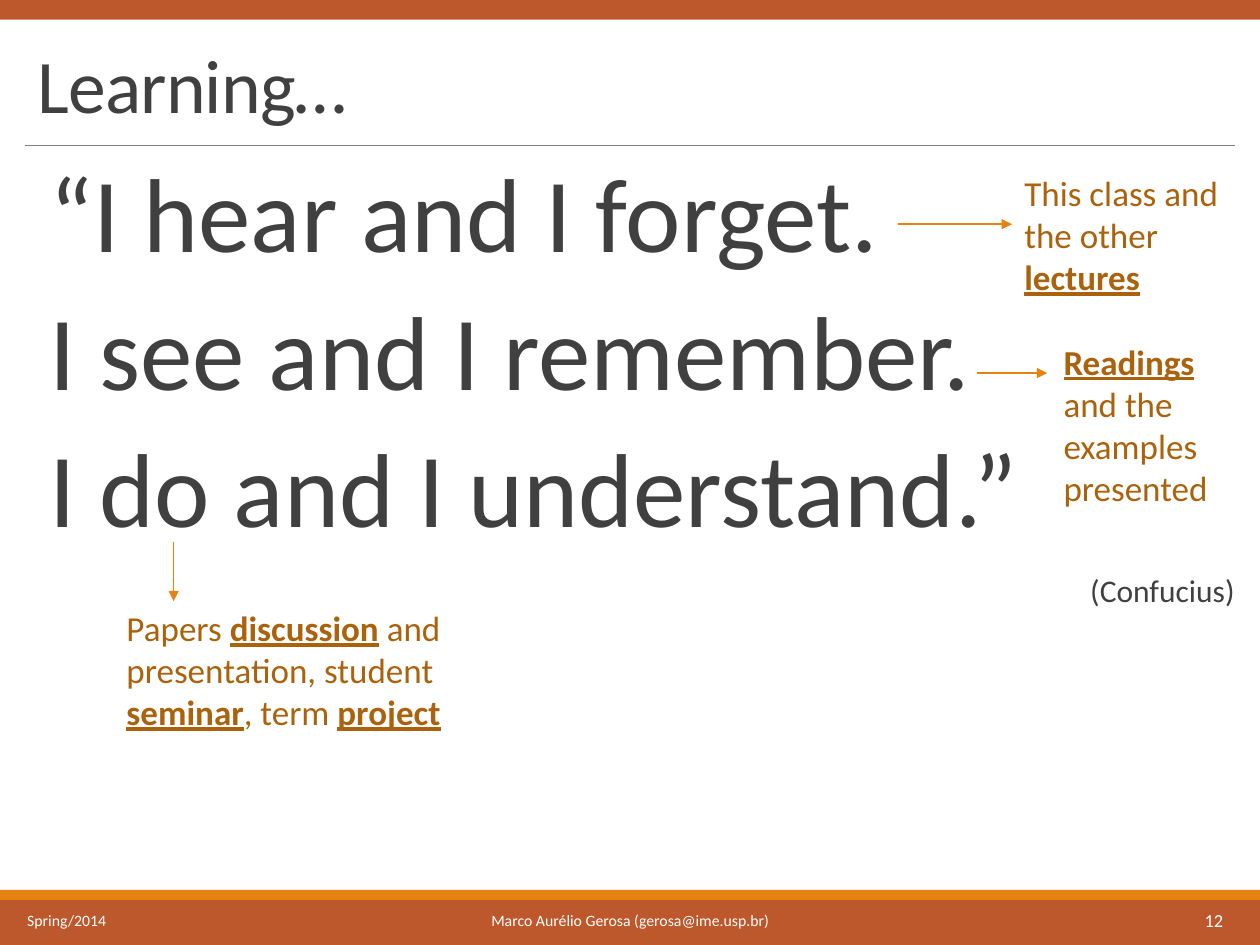
from lxml import etree
from pptx import Presentation
from pptx.dml.color import RGBColor
from pptx.enum.shapes import MSO_CONNECTOR, MSO_SHAPE
from pptx.enum.text import MSO_ANCHOR, MSO_AUTO_SIZE, PP_ALIGN
from pptx.oxml.ns import qn
from pptx.util import Cm, Pt

RECT = MSO_SHAPE.RECTANGLE
LINE = MSO_CONNECTOR.STRAIGHT
TOP, MID, LOW = MSO_ANCHOR.TOP, MSO_ANCHOR.MIDDLE, MSO_ANCHOR.BOTTOM
GROW, FIXED = MSO_AUTO_SIZE.SHAPE_TO_FIT_TEXT, MSO_AUTO_SIZE.NONE
LEFT, MIDDLE, RIGHT = PP_ALIGN.LEFT, PP_ALIGN.CENTER, PP_ALIGN.RIGHT

RUST = RGBColor(0xBD, 0x58, 0x2C)
AMBER = RGBColor(0xE4, 0x83, 0x12)
BROWN = RGBColor(0xAB, 0x62, 0x0D)
DARK = RGBColor(0x40, 0x40, 0x40)
GREY = RGBColor(0x80, 0x80, 0x80)
WHITE = RGBColor(0xFF, 0xFF, 0xFF)

WIDE, HIGH = 25.4, 19.05
EDGE = 0.51
SPAN = WIDE - 2 * EDGE
INDENT = 0.49

BARS = [
    (18.14, 0.91, RUST),
    (17.94, 0.2, AMBER),
    (0, 0.4, RUST),
]
TITLE = "Learning…"
QUOTE = [
    ("“I hear and I forget.", 60, LEFT),
    ("I see and I remember.", 60, LEFT),
    ("I do and I understand.”", 60, LEFT),
    ("(Confucius)", 18, RIGHT),
]
FOOT = [
    ("Spring/2014", (0.3, 18.17, 5.16, 0.76), 9, LEFT),
    ("Marco Aurélio Gerosa (gerosa@ime.usp.br)", (7.67, 18.14, 10.06, 0.84), 9, MIDDLE),
    ("12", (22.17, 18.17, 2.74, 0.76), 10.5, RIGHT),
]
NOTES = [
    ("This class and the other *lectures*", (20.4, 3.33, 4.5, 2.82)),
    ("*Readings* and the examples presented", (21.19, 6.73, 3.51, 3.68)),
    ("Papers *discussion* and presentation, student *seminar*, term *project*",
     (2.3, 12.1, 7.39, 2.82)),
]
ARROWS = [
    (18.11, 4.52, 20.4, 4.52),
    (19.7, 7.52, 21.11, 7.52),
    (3.5, 10.92, 3.5, 12.12),
]


def put(obj, form):
    for key, val in form.items():
        setattr(obj, key, val)


def add_bar(slide, top, tall, tint):
    bar = slide.shapes.add_shape(RECT, *map(Cm, (0, top, WIDE, tall)))
    bar.shadow.inherit = False
    bar.fill.solid()
    bar.fill.fore_color.rgb = tint
    bar.line.fill.background()


def add_line(slide, ends, tint, thick, head=False):
    line = slide.shapes.add_connector(LINE, *map(Cm, ends))
    line.line.color.rgb = tint
    line.line.width = Pt(thick)
    props = line._element.spPr
    if head:
        etree.SubElement(props.find(qn("a:ln")), qn("a:tailEnd"), type="triangle")
    etree.SubElement(props, qn("a:effectLst"))


def add_box(slide, place, **form):
    frame = slide.shapes.add_textbox(*map(Cm, place)).text_frame
    put(frame, {"word_wrap": True, "auto_size": FIXED, **form})
    return frame


def add_text(para, text, size, tint, **form):
    put(para, form)
    for num, part in enumerate(text.split("*")):
        if part:
            run = para.add_run()
            run.text = part
            put(run.font, {"name": "Calibri", "size": Pt(size)})
            run.font.color.rgb = tint
            if num % 2:
                put(run.font, {"bold": True, "underline": True})


def main():
    deck = Presentation()
    put(deck, {"slide_width": Cm(WIDE), "slide_height": Cm(HIGH)})
    slide = deck.slides.add_slide(deck.slide_layouts[6])

    for bar in BARS:
        add_bar(slide, *bar)
    add_line(slide, (EDGE, 2.93, WIDE - EDGE, 2.93), GREY, 0.5)

    frame = add_box(slide, (EDGE, 0.79, SPAN, 1.93), vertical_anchor=LOW)
    para = frame.paragraphs[0]
    add_text(para, TITLE, 43.2, DARK, line_spacing=0.85)
    para.runs[0].font._element.set("spc", "-50")

    frame = add_box(slide, (EDGE, 3.13, SPAN, 14.58), vertical_anchor=TOP,
                    margin_left=Cm(INDENT), margin_right=0)
    for num, (text, size, side) in enumerate(QUOTE):
        para = frame.add_paragraph() if num else frame.paragraphs[0]
        add_text(para, text, size, DARK, alignment=side, line_spacing=0.9,
                 space_before=Pt(12), space_after=Pt(2))

    for text, place, size, side in FOOT:
        frame = add_box(slide, place, vertical_anchor=MID)
        add_text(frame.paragraphs[0], text, size, WHITE, alignment=side)

    for text, place in NOTES:
        frame = add_box(slide, place, auto_size=GROW)
        add_text(frame.paragraphs[0], text, 20, BROWN)
    for ends in ARROWS:
        add_line(slide, ends, AMBER, 1, head=True)

    deck.save("out.pptx")


if __name__ == "__main__":
    main()
